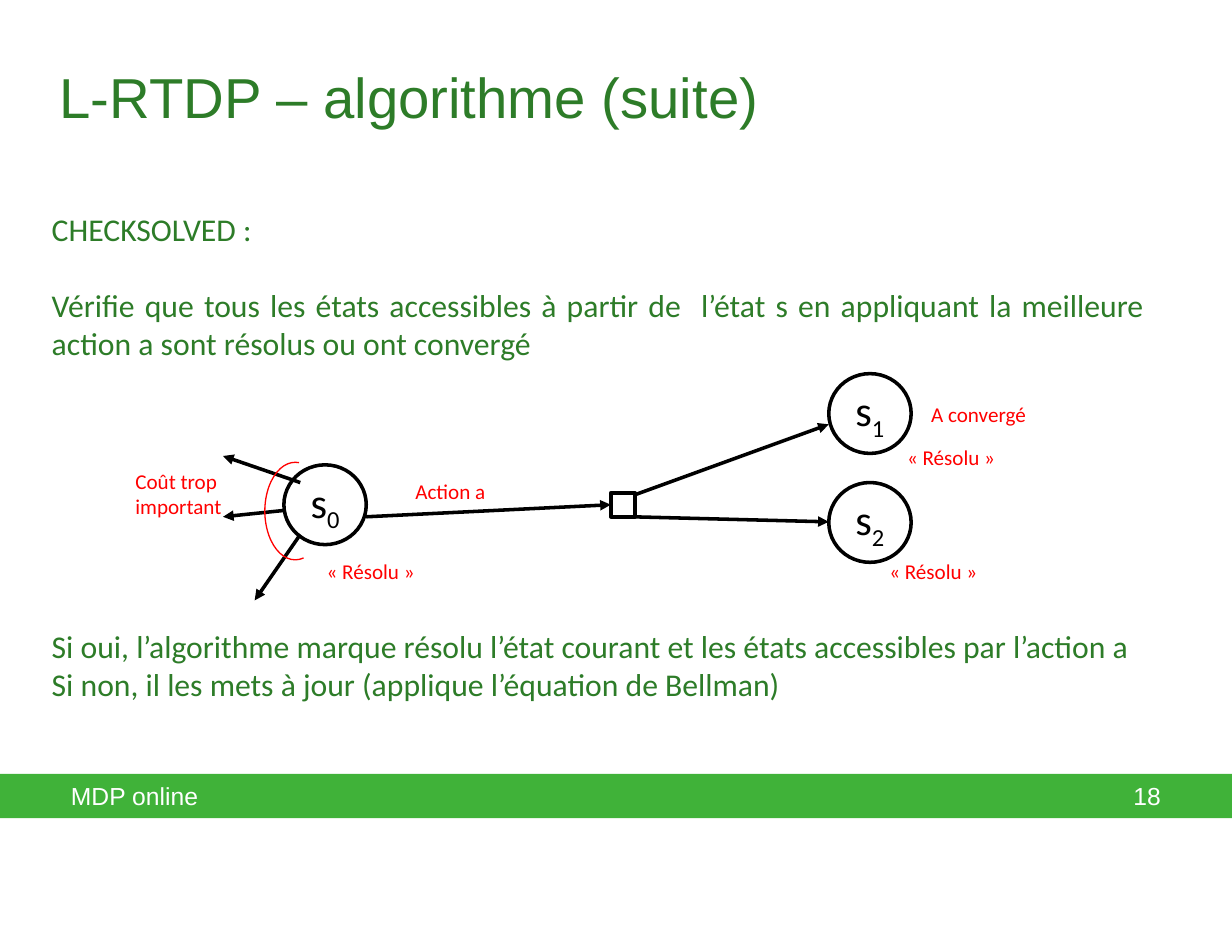
from dataclasses import dataclass

from lxml import etree
from pptx import Presentation
from pptx.dml.color import RGBColor
from pptx.enum.shapes import MSO_CONNECTOR, MSO_SHAPE
from pptx.enum.text import MSO_ANCHOR, MSO_AUTO_SIZE, PP_ALIGN
from pptx.oxml.ns import qn
from pptx.util import Inches, Pt

RECT, OVAL, ARC = MSO_SHAPE.RECTANGLE, MSO_SHAPE.OVAL, MSO_SHAPE.ARC
STRAIGHT = MSO_CONNECTOR.STRAIGHT
MIDDLE, TOP = MSO_ANCHOR.MIDDLE, MSO_ANCHOR.TOP
GROW, FIXED = MSO_AUTO_SIZE.SHAPE_TO_FIT_TEXT, MSO_AUTO_SIZE.NONE
LEFT, RIGHT = PP_ALIGN.LEFT, PP_ALIGN.RIGHT
CENTER, JUSTIFY = PP_ALIGN.CENTER, PP_ALIGN.JUSTIFY
LEFT_SIDE = 1
WIDE, HIGH = 700 / 72, 540 / 72  # 700 by 540 points, in inches


@dataclass(frozen=True)
class Theme:
    head: str = "Arial"
    body: str = "Calibri"
    green: str = "2D7C28"
    bar: str = "40B239"
    white: str = "FFFFFF"
    black: str = "000000"
    red: str = "FF0000"
    title: int = 32
    state: int = 24
    text: int = 18
    foot: int = 14
    note: int = 12
    thick: float = 2
    thin: float = 0.75
    row: float = 21.5  # height in points of one line of body text


class Page:
    def __init__(self, slide, theme):
        self.shapes = slide.shapes
        self.theme = theme

    def style(self, para, face, size, color, align=LEFT):
        para.alignment = align
        font = para.font
        font.name, font.size = face, Pt(size)
        font.color.rgb = RGBColor.from_string(color)

    def shape(self, kind, area, fill=None, line=None, width=0):
        item = self.shapes.add_shape(kind, *map(Inches, area))
        item.shadow.inherit = False
        if fill:
            item.fill.solid()
            item.fill.fore_color.rgb = RGBColor.from_string(fill)
        else:
            item.fill.background()
        if line:
            item.line.color.rgb = RGBColor.from_string(line)
            item.line.width = Pt(width)
        else:
            item.line.fill.background()
        return item

    def text(self, area, paras, face, size, color, align=LEFT, wrap=True, fit=GROW):
        """Add a text box; paras holds pairs of wording and blank rows above."""
        frame = self.shapes.add_textbox(*map(Inches, area)).text_frame
        frame.word_wrap, frame.auto_size = wrap, fit
        frame.vertical_anchor = TOP
        for i, (words, gap) in enumerate(paras):
            para = frame.add_paragraph() if i else frame.paragraphs[0]
            para.text = words
            if gap:
                para.space_before = Pt(gap * self.theme.row)
            self.style(para, face, size, color, align)
        return frame

    def note(self, left, top, width, height, words):
        t = self.theme
        self.text((left, top, width, height), [(words, 0)], t.body, t.note, t.red)

    def foot(self, left, width, words, align):
        t = self.theme
        frame = self.text((left, 6.11, width, 0.35), [(words, 0)],
                          t.head, t.foot, t.white, align, fit=FIXED)
        frame.vertical_anchor = MIDDLE
        if align == RIGHT:
            frame.margin_right = Inches(0.56)
        else:
            frame.margin_left = Inches(0.56)

    def state(self, left, top, index):
        t = self.theme
        ring = self.shape(OVAL, (left, top, 0.65, 0.63), None, t.black, t.thick)
        frame = ring.text_frame
        frame.word_wrap, frame.vertical_anchor = False, MIDDLE
        para = frame.paragraphs[0]
        para.add_run().text = "s"
        sub = para.add_run()
        sub.text = index
        self.style(para, t.body, t.state, t.black, CENTER)
        sub.font._element.set("baseline", "-25000")

    def arrow(self, start, end):
        t = self.theme
        line = self.shapes.add_connector(STRAIGHT, *map(Inches, (*start, *end)))
        line.line.color.rgb = RGBColor.from_string(t.black)
        line.line.width = Pt(t.thick)
        etree.SubElement(line.line._get_or_add_ln(), qn("a:tailEnd"), type="triangle")
        etree.SubElement(line._element.spPr, qn("a:effectLst"))
        return line


def main():
    deck = Presentation()
    deck.slide_width, deck.slide_height = Inches(WIDE), Inches(HIGH)
    t = Theme()
    page = Page(deck.slides.add_slide(deck.slide_layouts[6]), t)

    page.shape(RECT, (0, 6.11, WIDE, 0.35), t.bar)
    page.foot(0, 8.48, "MDP online", LEFT)
    page.foot(8.54, 1.18, "18", RIGHT)
    page.text((0.37, 0.44, 5.76, 0.64), [("L-RTDP – algorithme (suite)", 0)],
              t.head, t.title, t.green, wrap=False)
    page.text((0.31, 1.61, 8.82, 4.04), [
        ("CHECKSOLVED :", 0),
        ("Vérifie que tous les états accessibles à partir de  l’état s en "
         "appliquant la meilleure action a sont résolus ou ont convergé", 1),
        ("Si oui, l’algorithme marque résolu l’état courant et les états "
         "accessibles par l’action a", 7),
        ("Si non, il les mets à jour (applique l’équation de Bellman)", 0),
    ], t.body, t.text, t.green, JUSTIFY)

    for left, top, index in [(2.24, 3.67, "0"), (6.54, 2.95, "1"), (6.54, 3.81, "2")]:
        page.state(left, top, index)
    box = page.shape(RECT, (4.82, 3.89, 0.19, 0.19), t.white, t.black, t.thick)

    for start, end in [
        ((5, 3.91), (6.54, 3.35)),
        ((4.99, 4.08), (6.54, 4.12)),
        ((2.37, 4.22), (2.01, 4.74)),
        ((2.24, 4.03), (1.76, 4.08)),
        ((2.37, 3.81), (1.76, 3.6)),
    ]:
        page.arrow(start, end)
    page.arrow((2.89, 4.08), (4.82, 3.99)).end_connect(box, LEFT_SIDE)

    arc = page.shape(ARC, (2.09, 3.65, 0.48, 0.77), None, t.red, t.thin)
    arc.adjustments[0], arc.adjustments[1] = 47.92, 164.66

    for left, top in [(2.48, 4.36), (6.92, 4.36), (7.06, 3.46)]:
        page.note(left, top, 0.94, 0.3, "« Résolu »")
    page.note(3.18, 3.73, 0.94, 0.3, "Action a")
    page.note(7.25, 3.12, 1.24, 0.3, "A convergé")
    page.note(0.97, 3.65, 0.94, 0.5, "Coût trop important")

    deck.save("out.pptx")


if __name__ == "__main__":
    main()
